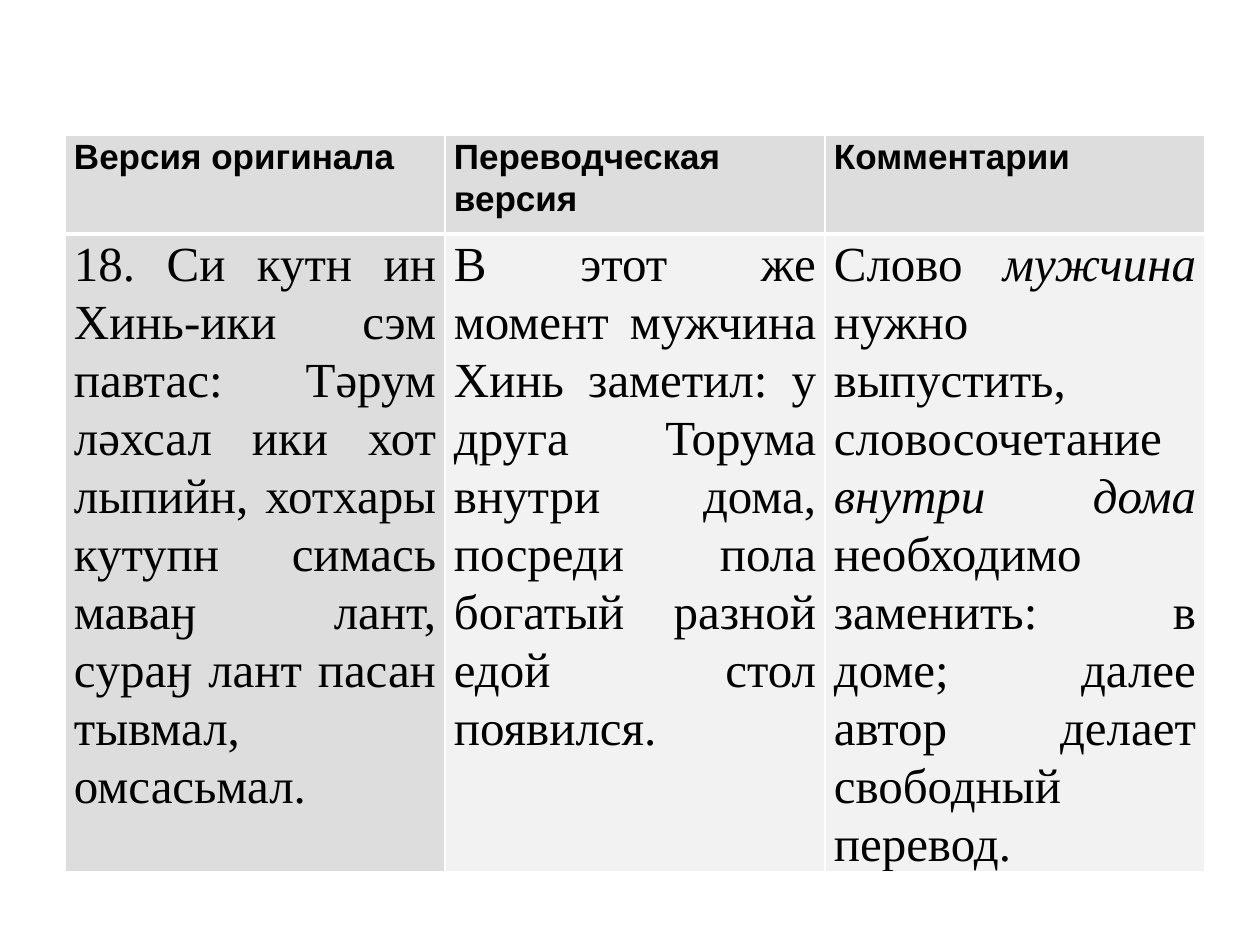
from lxml.etree import SubElement
from pptx import Presentation
from pptx.dml.color import RGBColor as Color
from pptx.enum.text import PP_ALIGN as Align
from pptx.oxml.ns import qn
from pptx.util import Pt

PX = 914400 // 126
THEME = {
    "ink": "000000",
    "border": "FFFFFF",
    "shaded": "DDDDDD",
    "light": "F2F2F2",
    "header": ("Arial", 20, True),
    "body": ("Times New Roman", 28, False),
}
ROWS = [
    [
        [("Версия оригинала", False)],
        [("Переводческая версия", False)],
        [("Комментарии", False)],
    ],
    [
        [("18. Си кутн ин Хинь-ики сэм павтас: Тǝрум лǝхсал ики хот лыпийн, "
          "хотхары кутупн симась маваӈ лант, cураӈ лант пасан тывмал, омсасьмал.", False)],
        [("В этот же момент мужчина Хинь заметил: у друга Торума внутри дома, "
          "посреди пола богатый разной едой стол появился.", False)],
        [("Слово ", False), ("мужчина", True),
         (" нужно выпустить, словосочетание ", False), ("внутри дома ", True),
         ("необходимо заменить: в доме; далее автор делает свободный перевод.", False)],
    ],
]
COLUMN_WIDTH = 380
ROW_HEIGHTS = [99, 624]


def set_border(cell, side, points):
    line = SubElement(cell._tc.get_or_add_tcPr(), qn(f"a:ln{side}"), w=str(Pt(points)))
    fill = SubElement(line, qn("a:solidFill"))
    SubElement(fill, qn("a:srgbClr"), val=THEME["border"])


presentation = Presentation()
presentation.slide_width = 1260 * PX
presentation.slide_height = 945 * PX
slide = presentation.slides.add_slide(presentation.slide_layouts[6])

table = slide.shapes.add_table(
    2, 3, 65 * PX, 135 * PX, 3 * COLUMN_WIDTH * PX, sum(ROW_HEIGHTS) * PX
).table
for column in table.columns:
    column.width = COLUMN_WIDTH * PX

for row_index, row in enumerate(ROWS):
    table.rows[row_index].height = ROW_HEIGHTS[row_index] * PX
    is_header = row_index == 0
    font_name, font_size, bold = THEME["header" if is_header else "body"]
    for column_index, runs in enumerate(row):
        cell = table.cell(row_index, column_index)
        cell.margin_left = cell.margin_right = 9 * PX
        cell.margin_top = cell.margin_bottom = 0
        for side, points in (("L", 1), ("R", 1), ("T", 1 if is_header else 3), ("B", 3 if is_header else 1)):
            set_border(cell, side, points)
        cell.fill.solid()
        shaded = is_header or column_index == 0
        cell.fill.fore_color.rgb = Color.from_string(THEME["shaded" if shaded else "light"])

        paragraph = cell.text_frame.paragraphs[0]
        paragraph.alignment = Align.JUSTIFY
        paragraph.line_spacing = 1.07
        paragraph.space_after = Pt(8)
        paragraph.font.name = font_name
        paragraph.font.size = Pt(font_size)
        paragraph.font.bold = bold
        paragraph.font.color.rgb = Color.from_string(THEME["ink"])
        for text, italic in runs:
            run = paragraph.add_run()
            run.text = text
            run.font.italic = italic

presentation.save("out.pptx")
